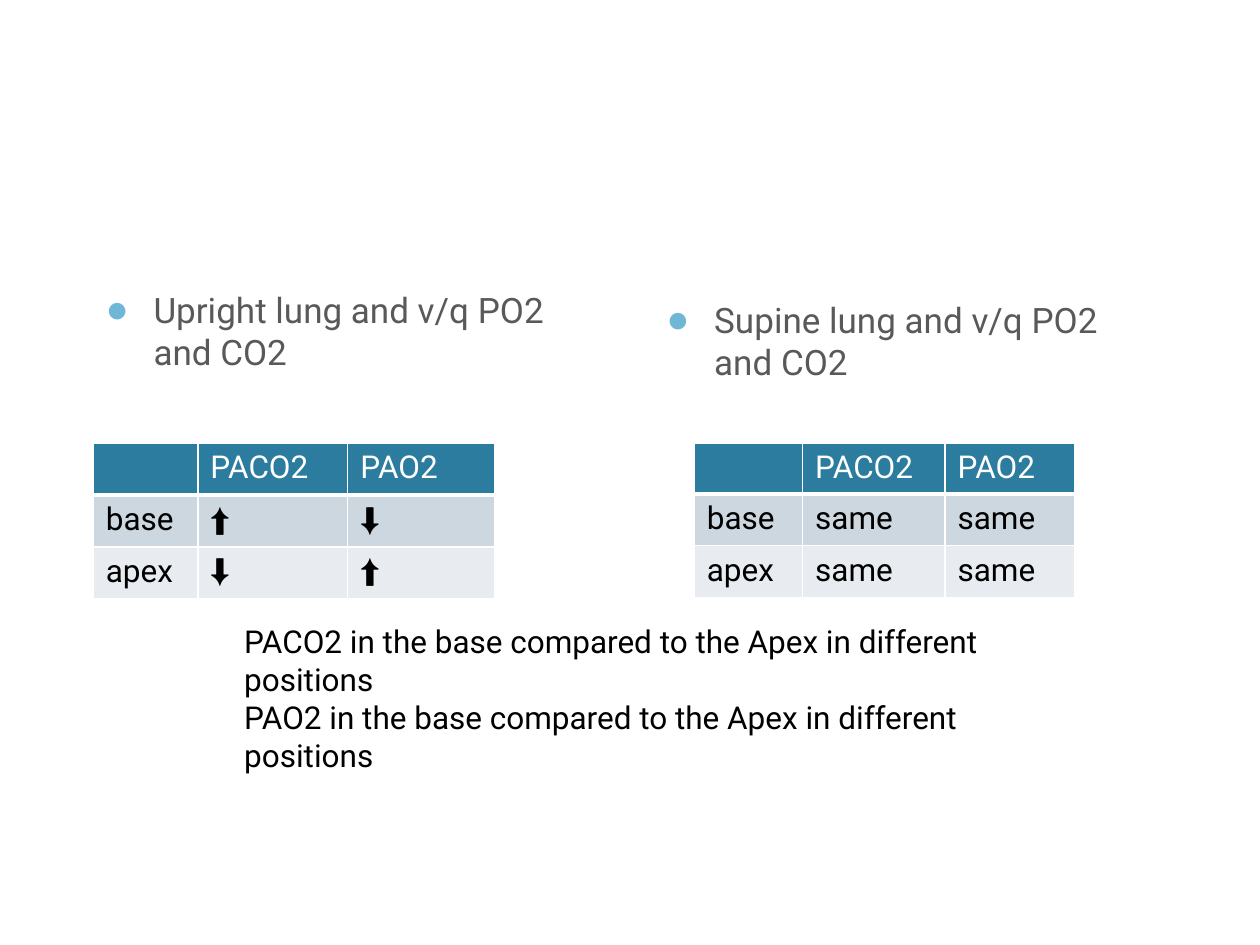
from lxml.etree import SubElement
from pptx import Presentation
from pptx.dml.color import RGBColor
from pptx.oxml.ns import qn
from pptx.util import Inches, Pt

COLORS = {
    "white": "FFFFFF",
    "black": "000000",
    "heading": "595959",
    "bullet": "6FB7D7",
    "header": "2C7C9F",
    "base": "CDD7DF",
    "apex": "E8ECF0",
}
UP, DOWN = "⬆", "⬇"
HEADER = ["", "PACO2", "PAO2"]


def add_text(paragraph, text, size, color, font="Roboto"):
    """Add one formatted run to a paragraph."""
    run = paragraph.add_run()
    run.text = text
    run.font.size = Pt(size)
    run.font.name = font
    run.font.color.rgb = RGBColor.from_string(COLORS[color])


def add_text_frame(slide, box):
    """Add a wrapping text box and return its text frame."""
    shape = slide.shapes.add_textbox(*map(Inches, box))
    shape.text_frame.word_wrap = True
    return shape.text_frame


def add_bullet(paragraph):
    """Give a paragraph a hanging round bullet."""
    properties = paragraph._p.get_or_add_pPr()
    properties.set("marL", str(Inches(0.38)))
    properties.set("indent", str(Inches(-0.38)))
    color = SubElement(properties, qn("a:buClr"))
    SubElement(color, qn("a:srgbClr"), val=COLORS["bullet"])
    SubElement(properties, qn("a:buSzPct"), val="110000")
    SubElement(properties, qn("a:buFont"), typeface="Arial")
    SubElement(properties, qn("a:buChar"), char="●")


def add_heading(slide, box, text):
    """Place a bulleted heading in its box."""
    paragraph = add_text_frame(slide, box).paragraphs[0]
    paragraph.space_before = Pt(16)
    add_bullet(paragraph)
    add_text(paragraph, text, 20, "heading")


def style_cell(cell, fill, bottom_width):
    """Set the white borders and the fill of a cell."""
    properties = cell._tc.get_or_add_tcPr()
    for side in "LRTB":
        width = bottom_width if side == "B" else 1
        line = SubElement(properties, qn(f"a:ln{side}"), w=str(Pt(width)))
        solid = SubElement(line, qn("a:solidFill"))
        SubElement(solid, qn("a:srgbClr"), val=COLORS["white"])
    cell.fill.solid()
    cell.fill.fore_color.rgb = RGBColor.from_string(COLORS[fill])


def add_gas_table(slide, box, widths, heights, rows):
    """Place a table of gas pressures by lung region."""
    rows = [HEADER, *rows]
    frame = slide.shapes.add_table(len(rows), len(HEADER), *map(Inches, box))
    table = frame.table
    for column, width in zip(table.columns, widths):
        column.width = Inches(width)
    for row, height, values in zip(table.rows, heights, rows):
        row.height = Inches(height)
        is_header = values is HEADER
        fill = values[0] or "header"
        for cell, value in zip(row.cells, values):
            style_cell(cell, fill, 3 if is_header else 1)
            if value:
                color = "white" if is_header else "black"
                font = "Arial" if value in (UP, DOWN) else "Roboto"
                add_text(cell.text_frame.paragraphs[0], value, 18, color, font)


def add_summary(slide, box, gases):
    """Place one comparison line for each gas."""
    frame = add_text_frame(slide, box)
    for index, gas in enumerate(gases):
        paragraph = frame.add_paragraph() if index else frame.paragraphs[0]
        text = f"{gas} in the base compared to the Apex in different positions"
        add_text(paragraph, text, 18, "black")


def main():
    """Build and save the lung position slide."""
    presentation = Presentation()
    presentation.slide_width = Inches(10)
    presentation.slide_height = Inches(7.5)
    slide = presentation.slides.add_slide(presentation.slide_layouts[6])
    add_heading(slide, (0.74, 2.24, 4.18, 3.77), "Upright lung and v/q PO2 and CO2")
    add_heading(slide, (5.19, 2.32, 4.09, 3.89), "Supine lung and v/q PO2 and CO2")
    add_gas_table(
        slide, (0.74, 3.52, 3.19, 1.22), (0.83, 1.19, 1.17), (0.41, 0.41, 0.41),
        [["base", UP, DOWN], ["apex", DOWN, UP]],
    )
    add_gas_table(
        slide, (5.51, 3.52, 3.01, 1.21), (0.86, 1.13, 1.03), (0.38, 0.41, 0.41),
        [[region, "same", "same"] for region in ("base", "apex")],
    )
    add_summary(slide, (1.84, 4.89, 6.7, 1.31), HEADER[1:])
    presentation.save("out.pptx")


if __name__ == "__main__":
    main()
